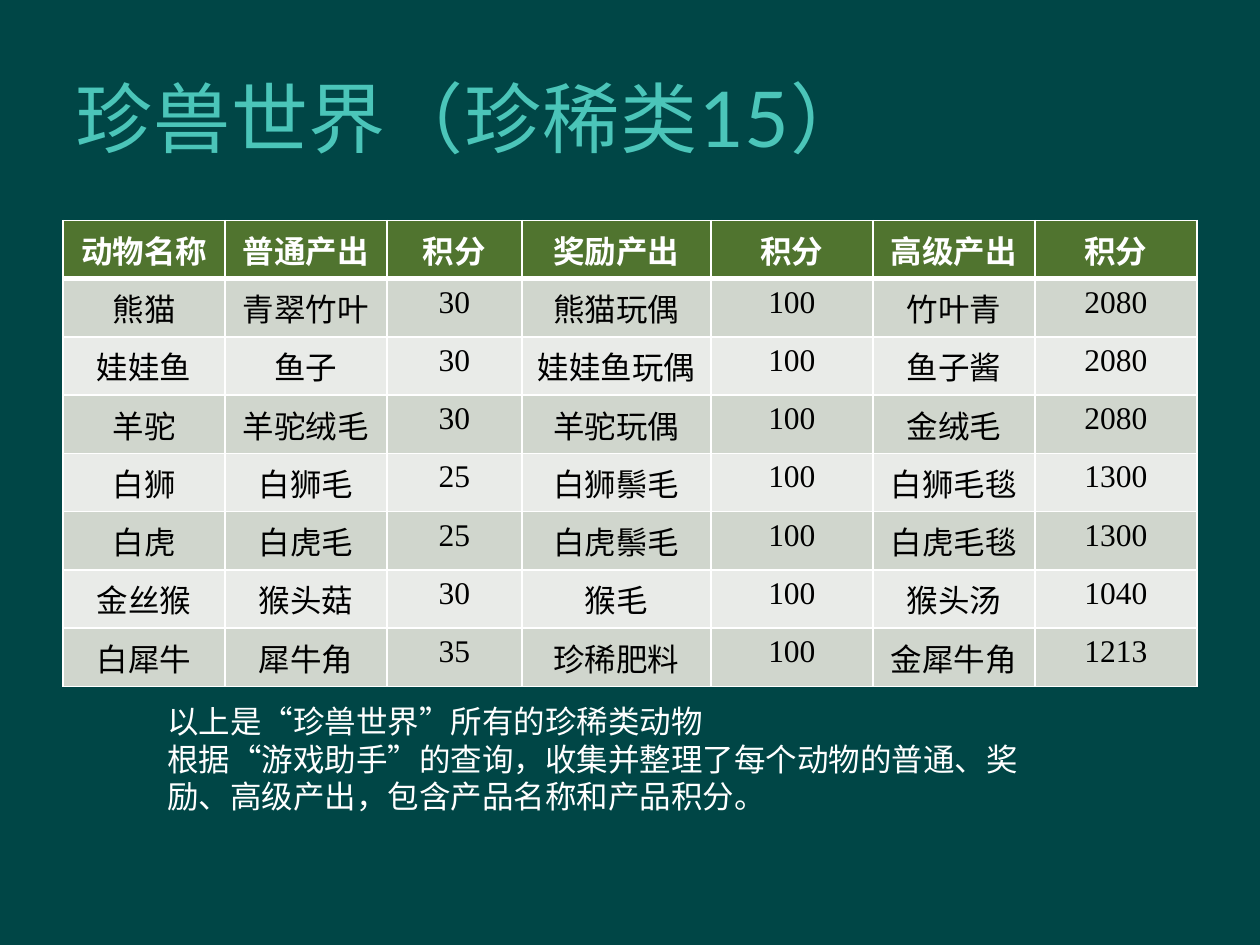
from dataclasses import dataclass

from lxml import etree
from pptx import Presentation
from pptx.dml.color import RGBColor
from pptx.enum.lang import MSO_LANGUAGE_ID
from pptx.enum.text import MSO_ANCHOR, PP_ALIGN
from pptx.oxml.ns import qn
from pptx.util import Inches, Pt

CENTER = PP_ALIGN.CENTER
MIDDLE = MSO_ANCHOR.MIDDLE
CHINESE = MSO_LANGUAGE_ID.SIMPLIFIED_CHINESE

WHITE = "FFFFFF"
HEAD_FILL = "50742F"
BANDS = ("D0D6CD", "E9EBE8")
HEADER = ("动物名称", "普通产出", "积分", "奖励产出", "积分", "高级产出", "积分")
ANIMALS = (
    ("熊猫", "青翠竹叶", "30", "熊猫玩偶", "100", "竹叶青", "2080"),
    ("娃娃鱼", "鱼子", "30", "娃娃鱼玩偶", "100", "鱼子酱", "2080"),
    ("羊驼", "羊驼绒毛", "30", "羊驼玩偶", "100", "金绒毛", "2080"),
    ("白狮", "白狮毛", "25", "白狮鬃毛", "100", "白狮毛毯", "1300"),
    ("白虎", "白虎毛", "25", "白虎鬃毛", "100", "白虎毛毯", "1300"),
    ("金丝猴", "猴头菇", "30", "猴毛", "100", "猴头汤", "1040"),
    ("白犀牛", "犀牛角", "35", "珍稀肥料", "100", "金犀牛角", "1213"),
)
ROWS = (HEADER, *ANIMALS)
GRID_WIDTH, GRID_HEIGHT = 9, 3.7
ROW_HEIGHT = GRID_HEIGHT / len(ROWS)
COLUMN = GRID_WIDTH / len(HEADER)
WIDE = 1.5
WIDTHS = (COLUMN, COLUMN, 2 * COLUMN - WIDE, WIDE, COLUMN, COLUMN, COLUMN)


@dataclass
class Style:
    font: str
    size: float
    color: str
    bold: bool = False
    spacing: int = 0


TITLE = Style("Lato", 44, "4BC5B9", spacing=50)
HEAD = Style("Times New Roman", 18, WHITE, bold=True)
BODY = Style("Times New Roman", 18, "000000")
NOTE = Style("Times New Roman", 18, WHITE)


def rgb(code: str) -> RGBColor:
    return RGBColor.from_string(code)


def write(frame, text: str, style: Style, align=None) -> None:
    frame.text = text
    for para in frame.paragraphs:
        if align is not None:
            para.alignment = align
        for run in para.runs:
            font = run.font
            font.name = style.font
            font.size = Pt(style.size)
            font.bold = style.bold
            font.color.rgb = rgb(style.color)
            font.language_id = CHINESE
            if style.spacing:
                font._element.set("spc", str(style.spacing))


def add_text(slide, box: tuple, text: str, style: Style, anchor=None) -> None:
    frame = slide.shapes.add_textbox(*map(Inches, box)).text_frame
    frame.word_wrap = True
    if anchor is not None:
        frame.vertical_anchor = anchor
    write(frame, text, style)


def add_borders(cell, top: float, bottom: float) -> None:
    """Draw white cell edges; must run before the fill is set."""
    props = cell._tc.get_or_add_tcPr()
    for side, width in (("L", 1), ("R", 1), ("T", top), ("B", bottom)):
        line = etree.SubElement(props, qn(f"a:ln{side}"), w=str(Pt(width)))
        fill = etree.SubElement(line, qn("a:solidFill"))
        etree.SubElement(fill, qn("a:srgbClr"), val=WHITE)


def add_grid(slide, left: float, top: float) -> None:
    table = slide.shapes.add_table(
        len(ROWS), len(WIDTHS), Inches(left), Inches(top),
        Inches(GRID_WIDTH), Inches(GRID_HEIGHT)).table
    for column, width in zip(table.columns, WIDTHS):
        column.width = Inches(width)
    for r, row in enumerate(ROWS):
        table.rows[r].height = Inches(ROW_HEIGHT)
        fill = BANDS[(r - 1) % 2] if r else HEAD_FILL
        for c, text in enumerate(row):
            cell = table.cell(r, c)
            add_borders(cell, 3 if r == 1 else 1, 3 if r == 0 else 1)
            cell.fill.solid()
            cell.fill.fore_color.rgb = rgb(fill)
            write(cell.text_frame, text, BODY if r else HEAD, CENTER)


def main() -> None:
    deck = Presentation()
    deck.slide_width, deck.slide_height = Inches(10), Inches(7.5)
    slide = deck.slides.add_slide(deck.slide_layouts[6])
    slide.background.fill.solid()
    slide.background.fill.fore_color.rgb = rgb("004646")

    add_text(slide, (0.5, 0.3, 8.5, 1.25), "珍兽世界（珍稀类15）", TITLE, MIDDLE)
    add_grid(slide, 0.5, 1.75)
    add_text(slide, (1.23, 5.52, 7.05, 1.01),
             "以上是“珍兽世界”所有的珍稀类动物\n"
             "根据“游戏助手”的查询，收集并整理了每个动物的普通、奖励、高级产出，"
             "包含产品名称和产品积分。", NOTE)
    deck.save("out.pptx")


if __name__ == "__main__":
    main()
